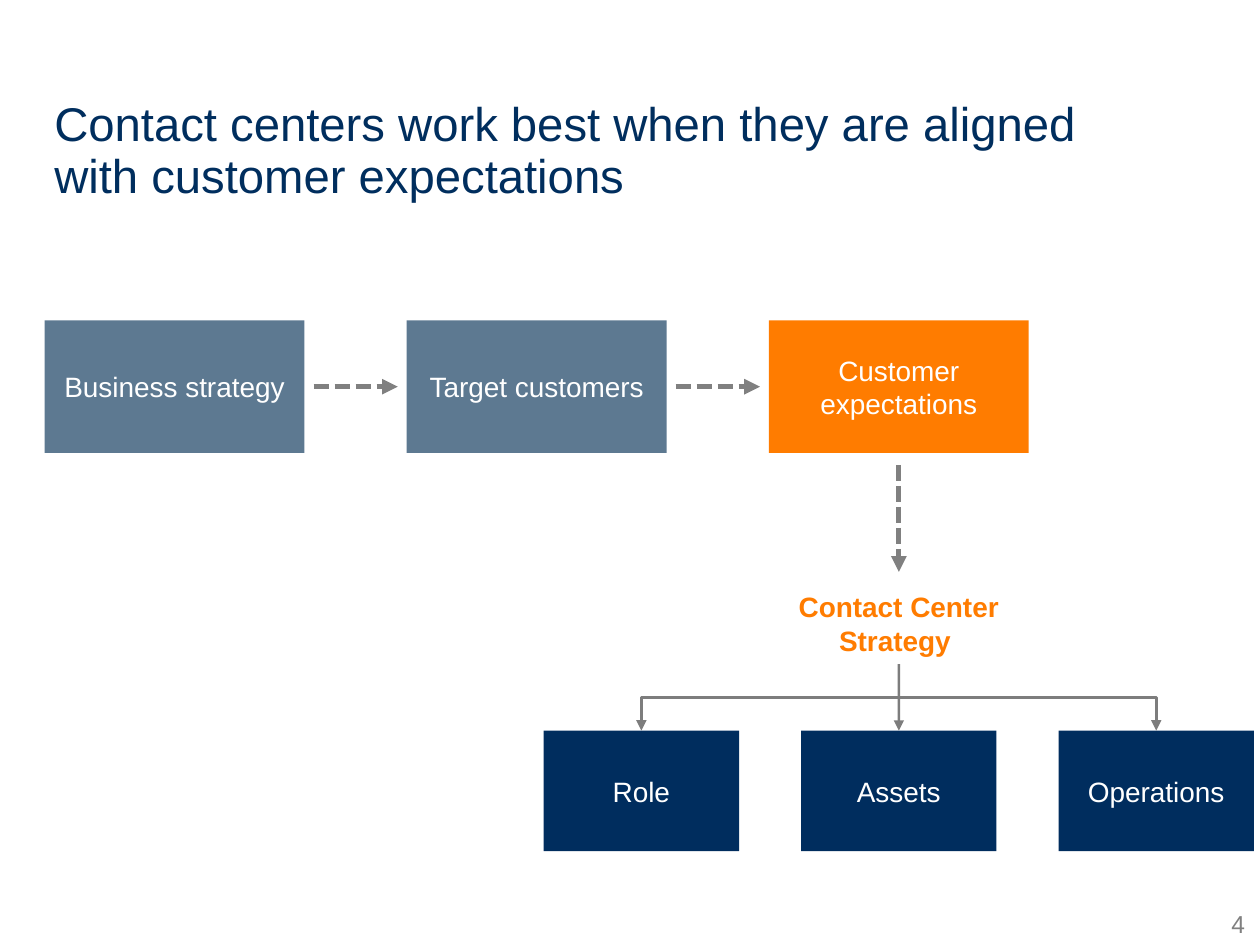
from dataclasses import dataclass

import pptx
import pptx.dml.color
import pptx.enum.dml
import pptx.enum.shapes
import pptx.enum.text
import pptx.oxml
import pptx.oxml.ns
import pptx.util

Cm = pptx.util.Cm
Pt = pptx.util.Pt
ALIGN = pptx.enum.text.PP_ALIGN
ANCHOR = pptx.enum.text.MSO_ANCHOR
CONNECTOR = pptx.enum.shapes.MSO_CONNECTOR

NAVY, SLATE, ORANGE = "002D5E", "5D7991", "FF7C00"
TITLE_BLUE, GREY, BRANCH_GREY = "002E5E", "808080", "7D7D7D"

# Layout in centimetres
STEP_LEFT, STEP_TOP, STEP_WIDTH, STEP_HEIGHT, STEP_PITCH = 0.9, 6.46, 5.24, 2.67, 7.3
GOAL_TOP, GOAL_WIDTH, GOAL_HEIGHT, GOAL_PITCH = 14.73, 3.94, 2.43, 5.19
LABEL_TOP, LABEL_WIDTH, LABEL_HEIGHT = 11.76, 4.6, 1.63
ARROW_GAP = 0.18
HUB = STEP_LEFT + 2 * STEP_PITCH + STEP_WIDTH / 2


@dataclass
class Block:
    text: str
    left: float
    top: float
    width: float
    height: float
    fill: str


def colour(value: str):
    return pptx.dml.color.RGBColor.from_string(value)


def style_text(para, size: float, value: str, align, bold: bool = False) -> None:
    para.alignment = align
    para.font.name = "Arial"
    para.font.size = Pt(size)
    para.font.bold = bold
    para.font.color.rgb = colour(value)


def draw_block(page, block: Block):
    box = page.shapes.add_shape(
        pptx.enum.shapes.MSO_SHAPE.RECTANGLE,
        Cm(block.left), Cm(block.top), Cm(block.width), Cm(block.height))
    box.shadow.inherit = False
    box.fill.solid()
    box.fill.fore_color.rgb = colour(block.fill)
    box.line.fill.background()
    box.text_frame.vertical_anchor = ANCHOR.MIDDLE
    box.text_frame.text = block.text
    style_text(box.text_frame.paragraphs[0], 16, "FFFFFF", ALIGN.CENTER)
    return box


def draw_text(page, text: str, left: float, top: float, width: float, height: float):
    box = page.shapes.add_textbox(Cm(left), Cm(top), Cm(width), Cm(height))
    box.text_frame.word_wrap = False
    box.text_frame.paragraphs[0].text = text
    return box


def draw_arrow(page, start: tuple, end: tuple, value: str, weight: float,
               dashed: bool = False, kind=CONNECTOR.STRAIGHT):
    arrow = page.shapes.add_connector(kind, *(Cm(n) for n in (*start, *end)))
    arrow.line.color.rgb = colour(value)
    arrow.line.width = Pt(weight)
    if dashed:
        arrow.line.dash_style = pptx.enum.dml.MSO_LINE.SQUARE_DOT
    properties = arrow._element.spPr
    head = pptx.oxml.parse_xml(f'<a:tailEnd {pptx.oxml.ns.nsdecls("a")} type="triangle"/>')
    properties.find(pptx.oxml.ns.qn("a:ln")).append(head)
    properties.append(pptx.oxml.parse_xml(f'<a:effectLst {pptx.oxml.ns.nsdecls("a")}/>'))
    return arrow


def draw_branch(page, start: tuple, end: tuple) -> None:
    """Elbow that leaves and arrives vertically: a horizontal one, turned."""
    middle_x, middle_y = (start[0] + end[0]) / 2, (start[1] + end[1]) / 2
    half_drop, half_span = (end[1] - start[1]) / 2, abs(end[0] - start[0]) / 2
    rightward = end[0] > start[0]
    side = -half_drop if rightward else half_drop
    branch = draw_arrow(page, (middle_x - side, middle_y - half_span),
                        (middle_x + side, middle_y + half_span),
                        BRANCH_GREY, 1.5, kind=CONNECTOR.ELBOW)
    turn = 270 if rightward else 90
    branch._element.spPr.xfrm.set("rot", str(turn * 60000))


def main() -> None:
    deck = pptx.Presentation()
    deck.slide_width, deck.slide_height = Cm(25.4), Cm(19.05)
    page = deck.slides.add_slide(deck.slide_layouts[5])

    # Title
    title = page.shapes.title
    title.left, title.top, title.width, title.height = Cm(0.84), Cm(1.91), Cm(22.1), Cm(1.42)
    frame = title.text_frame
    frame.text = "Contact centers work best when they are aligned with customer expectations"
    frame.auto_size = pptx.enum.text.MSO_AUTO_SIZE.NONE
    frame.vertical_anchor = ANCHOR.TOP
    frame.paragraphs[0].line_spacing = 0.9
    style_text(frame.paragraphs[0], 27, TITLE_BLUE, ALIGN.LEFT)

    # Row of steps with dashed arrows between them
    steps = [("Business strategy", SLATE), ("Target customers", SLATE),
             ("Customer expectations", ORANGE)]
    middle = STEP_TOP + STEP_HEIGHT / 2
    for index, (text, fill) in enumerate(steps):
        left = STEP_LEFT + index * STEP_PITCH
        draw_block(page, Block(text, left, STEP_TOP, STEP_WIDTH, STEP_HEIGHT, fill))
        if index:
            draw_arrow(page, (left - STEP_PITCH + STEP_WIDTH + ARROW_GAP, middle),
                       (left - ARROW_GAP, middle), GREY, 3, dashed=True)
    draw_arrow(page, (HUB, 9.37), (HUB, 11.53), GREY, 3, dashed=True)

    # Strategy label
    label = draw_text(page, "Contact Center\vStrategy ", HUB - LABEL_WIDTH / 2,
                      LABEL_TOP, LABEL_WIDTH, LABEL_HEIGHT)
    style_text(label.text_frame.paragraphs[0], 16, ORANGE, ALIGN.CENTER, bold=True)

    # Goals, each reached from the label
    source = (HUB, LABEL_TOP + LABEL_HEIGHT)
    for offset, text in zip((-1, 0, 1), ("Role", "Assets", "Operations")):
        centre = HUB + offset * GOAL_PITCH
        goal = draw_block(page, Block(text, centre - GOAL_WIDTH / 2, GOAL_TOP,
                                      GOAL_WIDTH, GOAL_HEIGHT, NAVY))
        target = (centre, GOAL_TOP)
        if offset:
            draw_branch(page, source, target)
        else:
            stem = draw_arrow(page, source, target, BRANCH_GREY, 1.5)
            stem.begin_connect(label, 2)
            stem.end_connect(goal, 0)

    # Page number
    number = draw_text(page, "4", 24.49, 18.49, 0.61, 0.43).text_frame
    number.margin_left = number.margin_right = number.margin_top = number.margin_bottom = 0
    number.paragraphs[0].line_spacing = 0.7
    style_text(number.paragraphs[0], 14, GREY, ALIGN.RIGHT)

    deck.save("out.pptx")


if __name__ == "__main__":
    main()
